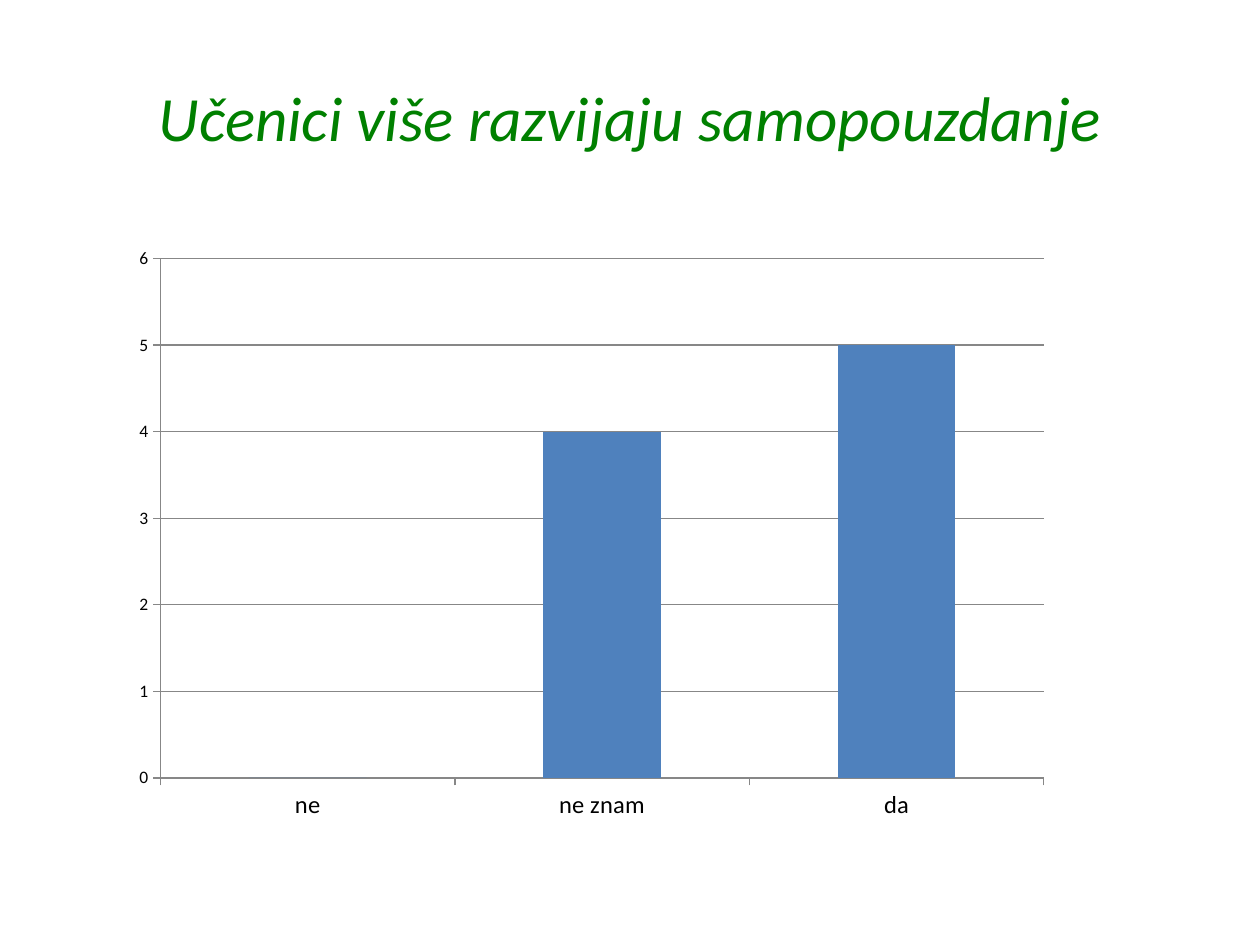
import pptx
import pptx.chart.data
import pptx.dml.color
import pptx.enum.chart
import pptx.enum.text
import pptx.oxml
import pptx.oxml.ns
import pptx.util
from pptx.util import Inches

GREEN = pptx.dml.color.RGBColor(0x00, 0x80, 0x00)
BLUE = pptx.dml.color.RGBColor(0x4F, 0x81, 0xBD)
GREY = pptx.dml.color.RGBColor(0x87, 0x87, 0x87)
BLACK = pptx.dml.color.RGBColor(0x00, 0x00, 0x00)


class Deck:
    font = "Calibri"

    def __init__(self):
        self.prs = pptx.Presentation()
        self.prs.slide_width = Inches(10)
        self.prs.slide_height = Inches(7.5)
        self.slide = self.prs.slides.add_slide(self.prs.slide_layouts[5])

    def style(self, font, size, color):
        font.name = self.font
        font.size = pptx.util.Pt(size)
        font.color.rgb = color

    def title(self, text, left, top, width, height):
        box = self.slide.shapes.title
        box.left, box.top = Inches(left), Inches(top)
        box.width, box.height = Inches(width), Inches(height)
        box.text_frame.vertical_anchor = pptx.enum.text.MSO_ANCHOR.MIDDLE
        para = box.text_frame.paragraphs[0]
        para.alignment = pptx.enum.text.PP_ALIGN.CENTER
        run = para.add_run()
        run.text = text
        self.style(run.font, 36, GREEN)
        run.font.italic = True

    def chart(self, cats, name, vals, left, top, width, height):
        data = pptx.chart.data.CategoryChartData()
        data.categories = cats
        data.add_series(name, vals)
        chart = self.slide.shapes.add_chart(
            pptx.enum.chart.XL_CHART_TYPE.COLUMN_CLUSTERED,
            Inches(left), Inches(top), Inches(width), Inches(height), data,
        ).chart
        chart.has_title = False
        chart.has_legend = False
        self.style(chart.font, 10, BLACK)

        plot = chart.plots[0]
        plot.gap_width = 150
        plot.vary_by_categories = False
        fill = plot.series[0].format.fill
        fill.solid()
        fill.fore_color.rgb = BLUE

        for axis, size in ((chart.category_axis, 14), (chart.value_axis, 10)):
            axis.major_tick_mark = pptx.enum.chart.XL_TICK_MARK.OUTSIDE
            axis.format.line.color.rgb = GREY
            self.style(axis.tick_labels.font, size, BLACK)
        scale = chart.value_axis
        scale.minimum_scale, scale.maximum_scale, scale.major_unit = 0, 6, 1
        scale.has_major_gridlines = True
        scale.major_gridlines.format.line.color.rgb = GREY
        return chart

    def place(self, chart, x, y, w, h):
        """Set the inner plot area as fractions of the chart frame."""
        area = chart.plots[0]._element.getparent()
        for old in area.findall(pptx.oxml.ns.qn("c:layout")):
            area.remove(old)
        sizes = "".join(
            f'<c:{tag} val="{val}"/>'
            for tag, val in (("x", x), ("y", y), ("w", w), ("h", h))
        )
        area.insert(0, pptx.oxml.parse_xml(
            f'<c:layout {pptx.oxml.ns.nsdecls("c")}><c:manualLayout>'
            '<c:layoutTarget val="inner"/>'
            '<c:xMode val="edge"/><c:yMode val="edge"/>'
            f'{sizes}</c:manualLayout></c:layout>'
        ))


def main():
    deck = Deck()
    deck.title("Učenici više razvijaju samopouzdanje", 0.5, 0.3, 9, 1.25)
    chart = deck.chart(
        ("ne", "ne znam", "da"), "Series 1", (0, 4, 5), 0.5, 1.75, 9, 4.95
    )
    deck.place(chart, 0.086, 0.061, 0.779, 0.833)
    deck.prs.save("out.pptx")


if __name__ == "__main__":
    main()
